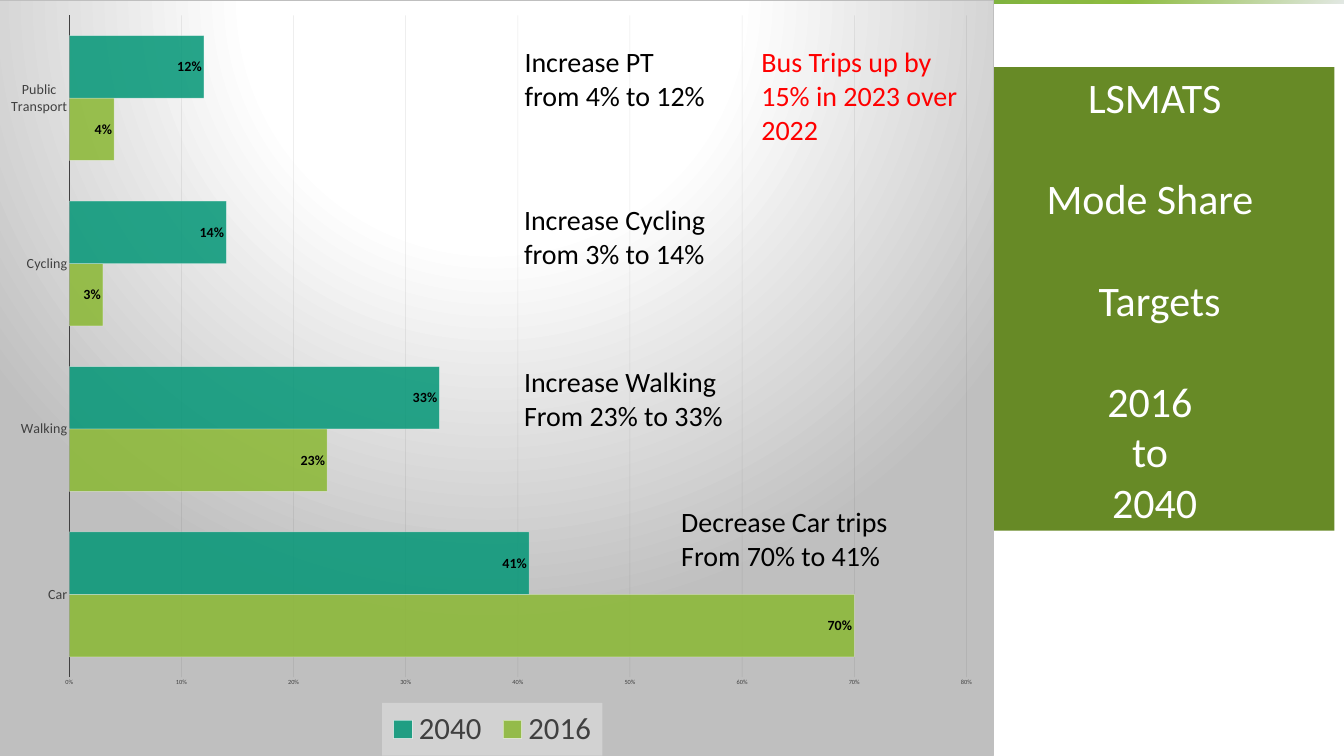
from pptx import Presentation
from pptx.chart.data import CategoryChartData
from pptx.dml.color import RGBColor
from pptx.enum.chart import XL_CHART_TYPE, XL_LABEL_POSITION, XL_LEGEND_POSITION, XL_TICK_MARK
from pptx.enum.shapes import MSO_SHAPE
from pptx.enum.text import MSO_ANCHOR, MSO_AUTO_SIZE, PP_ALIGN
from pptx.oxml import parse_xml
from pptx.oxml.ns import nsdecls
from pptx.util import Inches, Pt

BAR = XL_CHART_TYPE.BAR_CLUSTERED
INSIDE_END = XL_LABEL_POSITION.INSIDE_END
BOTTOM = XL_LEGEND_POSITION.BOTTOM
NO_TICK = XL_TICK_MARK.NONE
RECTANGLE = MSO_SHAPE.RECTANGLE
MIDDLE = MSO_ANCHOR.MIDDLE
NO_AUTOFIT = MSO_AUTO_SIZE.NONE
LEFT, CENTER = PP_ALIGN.LEFT, PP_ALIGN.CENTER
TITLE_ONLY = 5

CATEGORIES = ["Car", "Walking", "Cycling", "Public Transport"]
SERIES = [
    ("2016", [0.70, 0.23, 0.03, 0.04], "8AB833"),
    ("2040", [0.41, 0.33, 0.14, 0.12], "029676"),
]
TITLE_LINES = ["LSMATS", "Mode Share ", " Targets", "2016 ", "to ", "2040"]
SPACED_LINES = (1, 2, 3)
NOTES = [
    (10.31, 0.84, 1.45, ["Increase PT", "from 4% to 12%"], "000000"),
    (15.01, 0.84, 2.12, ["Bus Trips up by 15% in 2023 over 2022"], "FF0000"),
    (10.3, 3.97, 1.45, ["Increase Cycling from 3% to 14%"], "000000"),
    (10.3, 7.19, 1.45, ["Increase Walking", "From 23% to 33%"], "000000"),
    (13.42, 9.97, 1.45, ["Decrease Car trips", "From 70% to 41%"], "000000"),
]


def color(value):
    return RGBColor.from_string(value)


def format_font(font, size, value, bold=False):
    font.name = "Calibri"
    font.size = Pt(size)
    font.color.rgb = color(value)
    font.bold = bold


def write_text(frame, lines, size=40, value="000000", align=LEFT, spaced=(), gap=0):
    for index, line in enumerate(lines):
        paragraph = frame.paragraphs[0] if index == 0 else frame.add_paragraph()
        paragraph.alignment = align
        paragraph.space_before = Pt(gap if index in spaced else 0)
        run = paragraph.add_run()
        run.text = line
        format_font(run.font, size, value)


def gradient_xml(stops, direction):
    stop_xml = "".join(
        f'<a:gs pos="{position * 1000}"><a:srgbClr val="{value}"/></a:gs>'
        for position, value in stops
    )
    return f'<a:gradFill {nsdecls("a")}><a:gsLst>{stop_xml}</a:gsLst>{direction}</a:gradFill>'


def chart_properties(content):
    return parse_xml(f'<c:spPr {nsdecls("c", "a")}>{content}</c:spPr>')


def set_alpha(element, path, percent):
    for node in element.xpath(f"{path}/a:solidFill/a:srgbClr"):
        node.append(parse_xml(f'<a:alpha {nsdecls("a")} val="{percent * 1000}"/>'))


def set_layout(parent, index, x, y, width, height, inner=False):
    for old in parent.xpath("c:layout"):
        parent.remove(old)
    target = '<c:layoutTarget val="inner"/>' if inner else ""
    sizes = "".join(
        f'<c:{name} val="{value}"/>'
        for name, value in zip("xywh", (x, y, width, height))
    )
    parent.insert(index, parse_xml(
        f'<c:layout {nsdecls("c")}><c:manualLayout>{target}'
        f'<c:xMode val="edge"/><c:yMode val="edge"/>{sizes}</c:manualLayout></c:layout>'
    ))


class ModeShareSlide:
    def __init__(self, presentation):
        self.slide = presentation.slides.add_slide(presentation.slide_layouts[TITLE_ONLY])

    def gradient_bar(self, left, top, width, height, stops):
        shape = self.slide.shapes.add_shape(
            RECTANGLE, Inches(left), Inches(top), Inches(width), Inches(height))
        shape.shadow.inherit = False
        shape.line.fill.background()
        shape.fill.background()
        empty_fill = shape._element.spPr.xpath("a:noFill")[0]
        direction = '<a:lin ang="2700000" scaled="0"/>'
        empty_fill.getparent().replace(empty_fill, parse_xml(gradient_xml(stops, direction)))

    def title(self, left, top, width, height, lines):
        title = self.slide.shapes.title
        title.left, title.top = Inches(left), Inches(top)
        title.width, title.height = Inches(width), Inches(height)
        title.fill.solid()
        title.fill.fore_color.rgb = color("678A26")
        frame = title.text_frame
        frame.word_wrap = True
        frame.auto_size = NO_AUTOFIT
        frame.vertical_anchor = MIDDLE
        frame.margin_left = frame.margin_right = Inches(0.06)
        frame.margin_top = frame.margin_bottom = Inches(0.06)
        write_text(frame, lines, size=60, value="FFFFFF", align=CENTER,
                   spaced=SPACED_LINES, gap=73)

    def note(self, left, top, height, lines, value):
        box = self.slide.shapes.add_textbox(
            Inches(left), Inches(top), Inches(4.39), Inches(height))
        box.text_frame.word_wrap = True
        write_text(box.text_frame, lines, value=value)

    def chart(self, left, top, width, height):
        data = CategoryChartData(number_format="0%")
        data.categories = CATEGORIES
        for name, values, _ in SERIES:
            data.add_series(name, values)
        chart = self.slide.shapes.add_chart(
            BAR, Inches(left), Inches(top), Inches(width), Inches(height), data).chart
        chart.has_title = False
        format_font(chart.font, 10, "000000")
        self.format_bars(chart)
        self.format_axes(chart)
        self.format_legend(chart)
        self.format_background(chart)

    def format_bars(self, chart):
        plot = chart.plots[0]
        plot.gap_width = 65
        plot.overlap = 0
        plot.vary_by_categories = False
        for series, (_, _, value) in zip(plot.series, SERIES):
            series.format.fill.solid()
            series.format.fill.fore_color.rgb = color(value)
            series.format.line.color.rgb = color("FFFFFF")
            series.format.line.width = Pt(0.75)
            set_alpha(series._element, "c:spPr", 85)
            set_alpha(series._element, "c:spPr/a:ln", 50)
            labels = series.data_labels
            labels.show_value = True
            labels.position = INSIDE_END
            labels.number_format = "0%"
            labels.number_format_is_linked = False
            format_font(labels.font, 20, "000000", bold=True)

    def format_axes(self, chart):
        for axis, size in ((chart.category_axis, 20), (chart.value_axis, 9)):
            axis.major_tick_mark = axis.minor_tick_mark = NO_TICK
            format_font(axis.tick_labels.font, size, "404040")
        chart.category_axis.format.line.color.rgb = color("404040")
        chart.category_axis.format.line.width = Pt(1.5)
        axis = chart.value_axis
        axis.minimum_scale, axis.maximum_scale, axis.major_unit = 0, 0.8, 0.1
        axis.tick_labels.number_format = "0%"
        axis.tick_labels.number_format_is_linked = False
        axis.format.line.fill.background()
        grid_line = axis.major_gridlines.format.line
        grid_line.color.rgb = color("0D0D0D")
        grid_line.width = Pt(0.75)
        set_alpha(axis._element, "c:majorGridlines/c:spPr/a:ln", 10)

    def format_legend(self, chart):
        chart.has_legend = True
        chart.legend.position = BOTTOM
        chart.legend.include_in_layout = False
        format_font(chart.legend.font, 44, "404040")
        legend = chart._chartSpace.xpath("c:chart/c:legend")[0]
        set_layout(legend, 1, 0.39, 0.93, 0.22, 0.07)
        legend.xpath("c:overlay")[0].addnext(chart_properties(
            '<a:solidFill><a:srgbClr val="F2F2F2"><a:alpha val="39000"/></a:srgbClr></a:solidFill>'))

    def format_background(self, chart):
        plot_area = chart._chartSpace.xpath("c:chart/c:plotArea")[0]
        set_layout(plot_area, 0, 0.0775, 0.02, 0.896, 0.876, inner=True)
        plot_area.append(chart_properties("<a:noFill/>"))
        direction = ('<a:path path="circle"><a:fillToRect l="50000" t="-80000" '
                     'r="50000" b="180000"/></a:path>')
        fill = gradient_xml([(0, "FFFFFF"), (39, "FFFFFF"), (100, "BFBFBF")], direction)
        border = '<a:ln w="9525"><a:solidFill><a:srgbClr val="BFBFBF"/></a:solidFill></a:ln>'
        chart._chartSpace.xpath("c:chart")[0].addnext(chart_properties(fill + border))


def main():
    presentation = Presentation()
    presentation.slide_width, presentation.slide_height = Inches(26.67), Inches(15)
    page = ModeShareSlide(presentation)
    page.gradient_bar(0, -0.06, 26.67, 0.13, [(0, "0E6C39"), (84, "8EBC40"), (100, "E2E8E3")])
    page.title(19.35, 1.33, 7.13, 9.2, TITLE_LINES)
    page.chart(-0.17, 0, 19.88, 15)
    for note in NOTES:
        page.note(*note)
    presentation.save("out.pptx")


if __name__ == "__main__":
    main()
